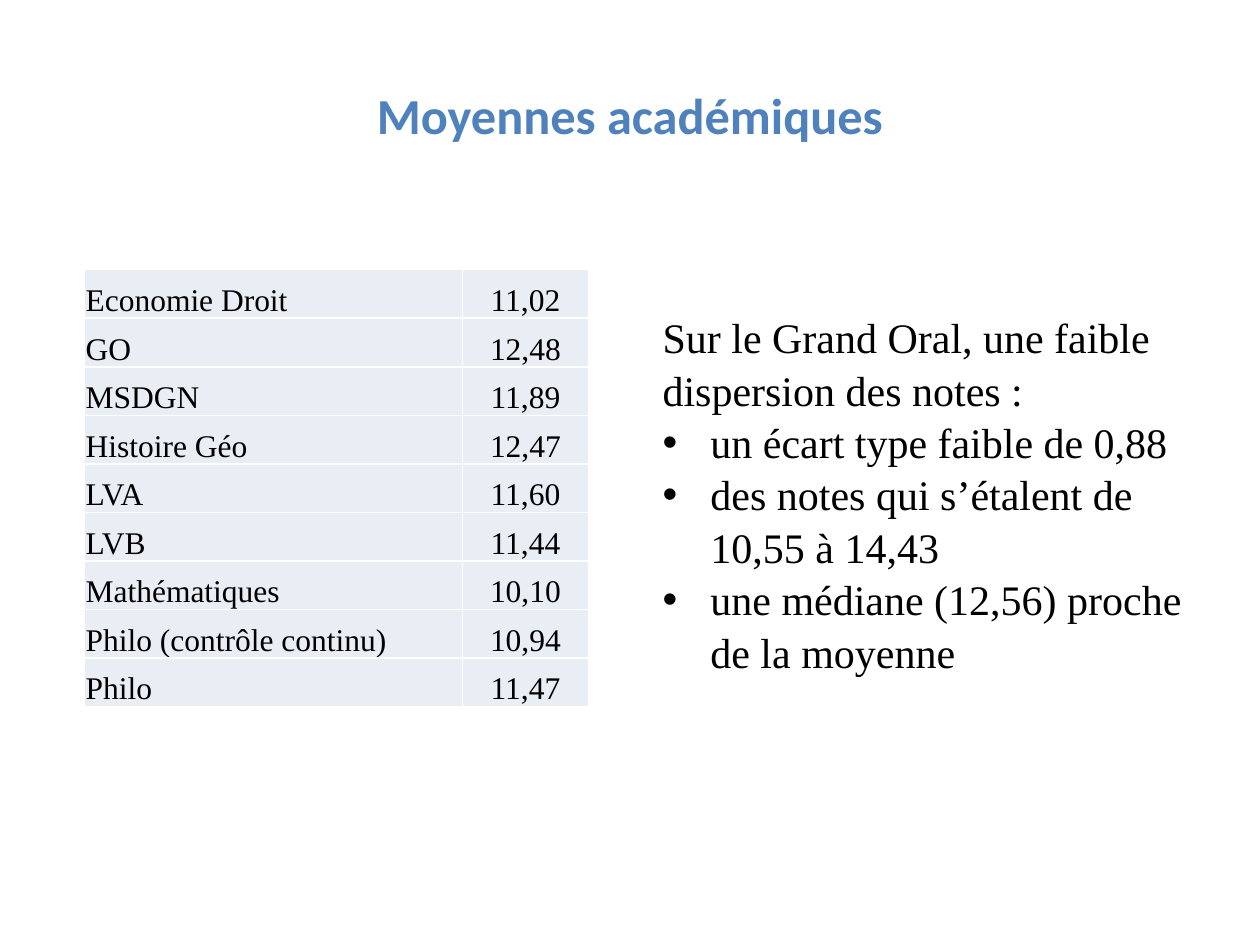
import pptx
import pptx.dml.color
import pptx.enum.text
import pptx.oxml.ns
import pptx.util
from lxml import etree

Inches = pptx.util.Inches
Pt = pptx.util.Pt
RGBColor = pptx.dml.color.RGBColor
Align = pptx.enum.text.PP_ALIGN
Anchor = pptx.enum.text.MSO_ANCHOR
qn = pptx.oxml.ns.qn

BLUE = RGBColor(0x4F, 0x81, 0xBD)
PALE = RGBColor(0xE9, 0xED, 0xF4)
BLACK = RGBColor(0, 0, 0)
WHITE = RGBColor(0xFF, 0xFF, 0xFF)

MARKS = [
    ("Economie Droit", "11,02"),
    ("GO", "12,48"),
    ("MSDGN", "11,89"),
    ("Histoire Géo", "12,47"),
    ("LVA", "11,60"),
    ("LVB", "11,44"),
    ("Mathématiques", "10,10"),
    ("Philo (contrôle continu)", "10,94"),
    ("Philo", "11,47"),
]
INTRO = "Sur le Grand Oral, une faible dispersion des notes :"
POINTS = [
    "un écart type faible de 0,88",
    "des notes qui s’étalent de 10,55 à 14,43",
    "une médiane (12,56) proche de la moyenne",
]


class Deck:
    serif = "Times New Roman"
    sans = "Calibri"

    def __init__(self):
        self.prs = pptx.Presentation()
        self.prs.slide_width = Inches(10)
        self.prs.slide_height = Inches(7.5)
        self.slide = self.prs.slides.add_slide(self.prs.slide_layouts[5])

    def text(self, para, words, size, font=serif, color=BLACK, bold=False):
        run = para.add_run()
        run.text = words
        run.font.name = font
        run.font.size = Pt(size)
        run.font.bold = bold
        run.font.color.rgb = color

    def title(self, words, left, top, width, height):
        box = self.slide.shapes.title
        box.left, box.top = Inches(left), Inches(top)
        box.width, box.height = Inches(width), Inches(height)
        frame = box.text_frame
        frame.vertical_anchor = Anchor.MIDDLE
        para = frame.paragraphs[0]
        para.alignment = Align.CENTER
        self.text(para, words, 28.8, self.sans, BLUE, True)

    def border(self, cell):
        props = cell._tc.get_or_add_tcPr()
        for side in ("a:lnL", "a:lnR", "a:lnT", "a:lnB"):
            line = etree.SubElement(props, qn(side), w=str(Pt(1)))
            fill = etree.SubElement(line, qn("a:solidFill"))
            etree.SubElement(fill, qn("a:srgbClr"), val=str(WHITE))

    def table(self, rows, left, top, widths, height):
        grid = self.slide.shapes.add_table(
            len(rows), len(widths), Inches(left), Inches(top),
            Inches(sum(widths)), Inches(height)).table
        grid.first_row = grid.horz_banding = False
        for col, width in zip(grid.columns, widths):
            col.width = Inches(width)
        for r, row in enumerate(rows):
            for c, words in enumerate(row):
                cell = grid.cell(r, c)
                self.border(cell)
                cell.fill.solid()
                cell.fill.fore_color.rgb = PALE
                cell.vertical_anchor = Anchor.BOTTOM
                cell.margin_left = cell.margin_right = Inches(0.01)
                cell.margin_top, cell.margin_bottom = Inches(0.01), 0
                para = cell.text_frame.paragraphs[0]
                para.alignment = Align.CENTER if c else Align.LEFT
                self.text(para, words, 18)

    def bullet(self, para):
        props = para._p.get_or_add_pPr()
        indent = Inches(0.38)
        props.set("marL", str(indent))
        props.set("indent", str(-indent))
        etree.SubElement(props, qn("a:buFont"), typeface="Arial")
        etree.SubElement(props, qn("a:buChar"), char="•")

    def notes(self, intro, points, left, top, width, height):
        frame = self.slide.shapes.add_textbox(
            Inches(left), Inches(top), Inches(width), Inches(height)).text_frame
        frame.word_wrap = True
        frame.auto_size = pptx.enum.text.MSO_AUTO_SIZE.SHAPE_TO_FIT_TEXT
        for i, words in enumerate([intro] + points):
            para = frame.add_paragraph() if i else frame.paragraphs[0]
            if i:
                self.bullet(para)
            para.line_spacing = 1.04
            self.text(para, words, 24)


def main():
    deck = Deck()
    # Heading
    deck.title("Moyennes académiques", 0.5, 0.6, 9, 0.61)
    # Average mark per subject
    deck.table(MARKS, 0.67, 2.14, (3, 1), 3.47)
    # Comment on the oral exam
    deck.notes(INTRO, POINTS, 5.16, 2.41, 4.49, 2.93)
    deck.prs.save("out.pptx")


if __name__ == "__main__":
    main()
